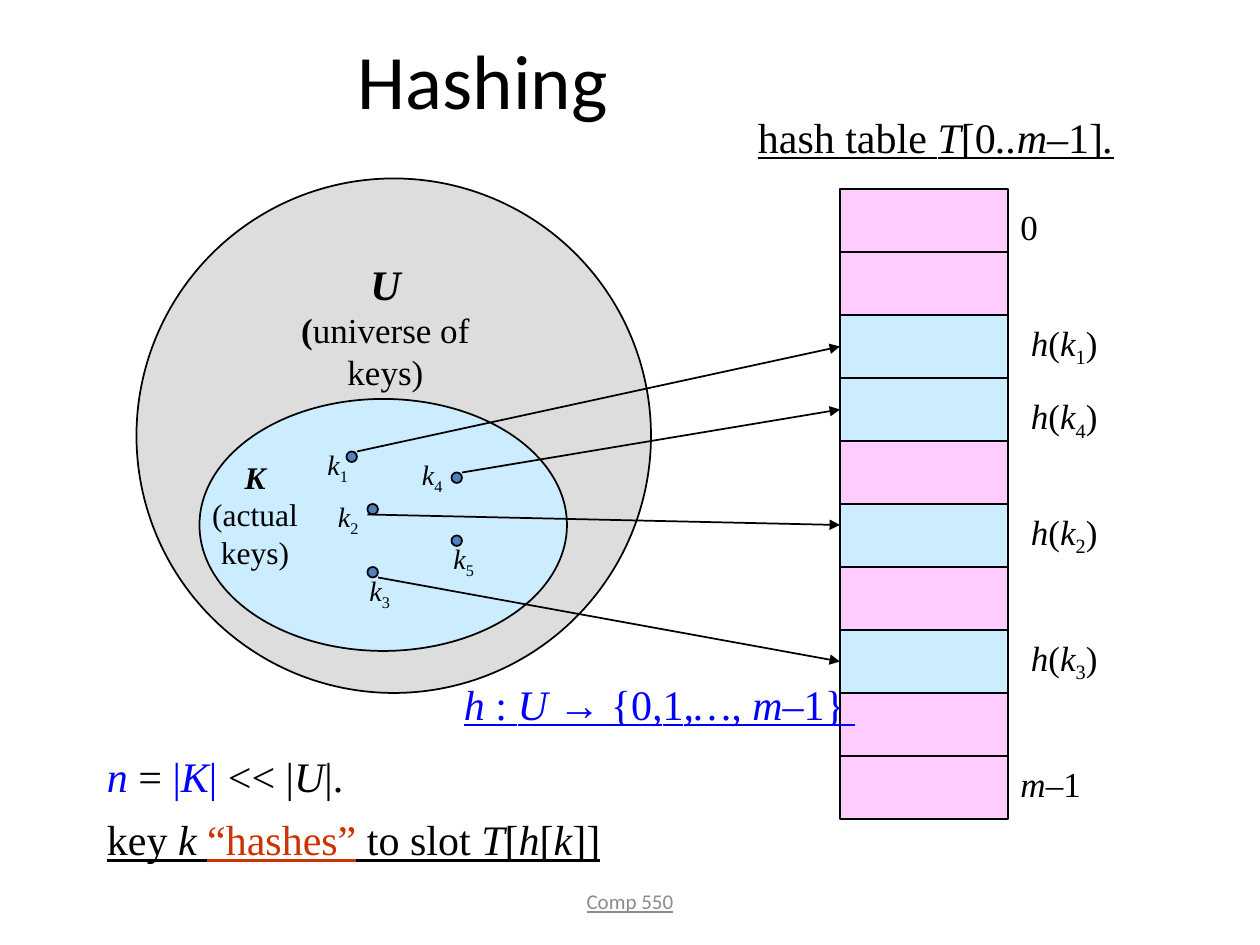
from pptx import Presentation
from pptx.dml.color import RGBColor
from pptx.enum.shapes import MSO_CONNECTOR, MSO_SHAPE
from pptx.enum.text import MSO_ANCHOR, MSO_AUTO_SIZE, PP_ALIGN
from pptx.oxml.ns import qn
from pptx.util import Pt
from lxml.etree import SubElement

THEME = {
    "serif": "Times New Roman", "sans": "Calibri",
    "title": 44, "body": 24, "label": 20, "set": 18, "key": 16, "footer": 12,
    "ink": "000000", "blue": "0000FF", "red": "CC3300", "gray": "8C8C8C",
    "empty": "FFCCFF", "used": "CCECFF", "universe": "DDDDDD", "dot": "4F81BD",
    "line": 1,
}
FLAGS = {"n": "blue", "r": "red", "g": "gray"}

TABLE = {"left": 480, "top": 108, "width": 96, "slot": 36, "count": 10}
UNIVERSE = (78, 102, 294, 294)
ACTUAL = (114, 228, 210, 144)
DOT = 6

KEYS = [
    ("1", (198, 258), (180, 252)),
    ("4", (258, 270), (234, 258)),
    ("2", (210, 288), (186, 282)),
    ("5", (258, 306), (252, 306)),
    ("3", (210, 324), (204, 324)),
]
HASHES = [
    ("1", 2, 180, (204, 258), 198),
    ("4", 3, 222, (264, 270), 234),
    ("2", 5, 288, (210, 294), 300),
    ("3", 7, 360, (216, 330), 378),
]
ENDS = [
    (114, 24.5, [("0", "")]),
    (432, 49, [("m", "i"), ("–1", "")]),
]
SETS = [
    ((141, 144, 158.5, 60), [
        ("body", [("U", "bi")]),
        ("label", [("(", "b"), ("universe of keys)", "")])],
     {"word_wrap": True, "margin_left": Pt(22), "margin_right": Pt(22)}),
    ((114, 258, 63.5, 72), [
        ("set", [("K", "bi")]),
        ("set", [("(actual", "")]),
        ("set", [("keys)", "")])], {}),
]
CARDINALITY = [("n", "in"), (" = ", ""), ("|", "n"), ("K", "in"), ("| ", "n"),
               ("<< |", ""), ("U", "i"), ("|.", "")]
SLOT_RULE = [("key ", "u"), ("k", "iu"), (" ", "u"), ("“hashes”", "ur"),
             (" to slot ", "u"), ("T", "iu"), ("[", "u"), ("h", "iu"),
             ("[", "u"), ("k", "iu"), ("]]", "u")]
TABLE_NAME = [("hash table ", "u"), ("T", "iu"), ("[0", "u"), ("..m", "iu"),
              ("–1]", "u"), (".", "iu")]
MAPPING = [("h", "iun"), (" : ", "un"), ("U", "iun"), (" → {0", "un"),
           (",", "iun"), ("1", "un"), (",…, m", "iun"), ("–1} ", "un")]


def color(name):
    return RGBColor.from_string(THEME[name])


def apply(obj, values):
    for name, value in values.items():
        setattr(obj, name, value)


def add_text(s, box, paras, font="serif", align=PP_ALIGN.LEFT, **frame):
    sp = s.shapes.add_textbox(*map(Pt, box))
    tf = sp.text_frame
    apply(tf, {"word_wrap": False, "auto_size": MSO_AUTO_SIZE.SHAPE_TO_FIT_TEXT, **frame})
    for i, (size, runs) in enumerate(paras):
        p = tf.add_paragraph() if i else tf.paragraphs[0]
        p.alignment = align
        for text, flags in runs:
            r = p.add_run()
            r.text = text
            apply(r.font, {"name": THEME[font], "size": Pt(THEME[size]),
                           "bold": "b" in flags, "italic": "i" in flags,
                           "underline": "u" in flags})
            ink = next((FLAGS[f] for f in flags if f in FLAGS), "ink")
            r.font.color.rgb = color(ink)
            if "s" in flags:
                r.font._element.set("baseline", "-25000")
    return sp


def add_shape(s, kind, box, fill):
    sp = s.shapes.add_shape(kind, *map(Pt, box))
    sp.shadow.inherit = False
    sp.fill.solid()
    sp.fill.fore_color.rgb = color(fill)
    sp.line.color.rgb = color("ink")
    sp.line.width = Pt(THEME["line"])


def add_line(s, start, end, arrow=False):
    cx = s.shapes.add_connector(MSO_CONNECTOR.STRAIGHT, *map(Pt, start + end))
    cx.line.color.rgb = color("ink")
    cx.line.width = Pt(THEME["line"])
    if arrow:
        SubElement(cx.line._get_or_add_ln(), qn("a:tailEnd"), type="triangle")
    SubElement(cx._element.spPr, qn("a:effectLst"))


def add_hash_table(s):
    left, top, width, slot, count = TABLE.values()
    right = left + width
    add_shape(s, MSO_SHAPE.RECTANGLE, (left, top, width, slot * count), "empty")
    for i in range(1, count):
        y = top + i * slot
        add_line(s, (left, y), (right, y))
    for y, width_end, runs in ENDS:
        add_text(s, (right, y, width_end, 31), [("label", runs)])
    for key, index, y, _, _ in HASHES:
        add_shape(s, MSO_SHAPE.RECTANGLE, (left, top + index * slot, width, slot), "used")
        runs = [("h", "i"), ("(", ""), ("k", "i"), (key, "s"), (")", "")]
        add_text(s, (right + 6, y, 53.5, 31), [("label", runs)])


def add_key_sets(s):
    add_shape(s, MSO_SHAPE.OVAL, UNIVERSE, "universe")
    add_shape(s, MSO_SHAPE.OVAL, ACTUAL, "used")
    for box, paras, frame in SETS:
        add_text(s, box, paras, align=PP_ALIGN.CENTER, **frame)
    for key, dot, label in KEYS:
        add_shape(s, MSO_SHAPE.OVAL, dot + (DOT, DOT), "dot")
        add_text(s, label + (27.5, 26.5), [("key", [("k", "i"), (key, "s")])])
    for _, _, _, start, y in HASHES:
        add_line(s, start, (TABLE["left"], y), arrow=True)


def add_statements(s):
    sp = add_text(s, (18, 425.5, 187, 36), [("body", CARDINALITY)])
    p = sp.text_frame.paragraphs[0]
    p.level = 1
    apply_indent = {"marL": str(Pt(36)), "indent": "0"}
    for name, value in apply_indent.items():
        p._p.get_or_add_pPr().set(name, value)
    add_text(s, (54, 461.5, 444, 36), [("body", SLOT_RULE)], word_wrap=True)
    add_text(s, (426, 60, 219.5, 36), [("body", TABLE_NAME)])
    add_text(s, (258, 384, 240, 36), [("body", MAPPING)])


def main():
    prs = Presentation()
    prs.slide_width, prs.slide_height = Pt(720), Pt(540)
    s = prs.slides.add_slide(prs.slide_layouts[6])
    centered = {"font": "sans", "align": PP_ALIGN.CENTER, "word_wrap": True,
                "auto_size": MSO_AUTO_SIZE.NONE, "vertical_anchor": MSO_ANCHOR.MIDDLE}
    add_text(s, (-48, 0, 648, 90), [("title", [("Hashing", "")])], **centered)
    add_hash_table(s)
    add_key_sets(s)
    add_text(s, (246, 500.5, 228, 28.75), [("footer", [("Comp 550", "ug")])], **centered)
    add_statements(s)
    prs.save("out.pptx")


if __name__ == "__main__":
    main()
